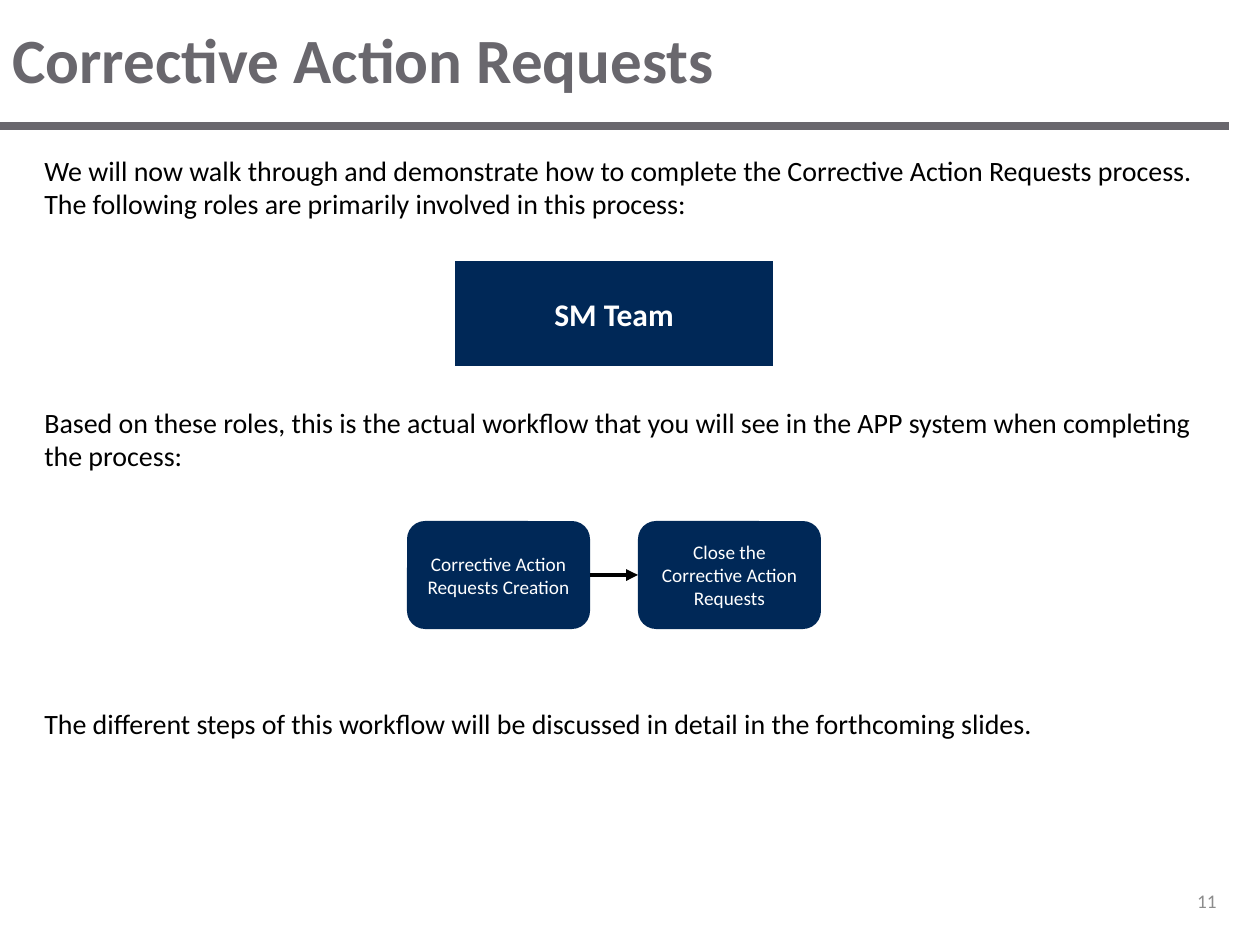
from lxml import etree
from pptx import Presentation
from pptx.dml.color import RGBColor
from pptx.enum.shapes import MSO_CONNECTOR as Connector, MSO_SHAPE as Preset
from pptx.enum.text import MSO_ANCHOR as Anchor, PP_ALIGN as Align
from pptx.oxml.ns import qn
from pptx.util import Pt

PX = 914400 / 126  # EMU per pixel
FONT = "Calibri"
NAVY, GRAY, LIGHT_GRAY = "002857", "69676D", "8C8C8C"
BLACK, WHITE = "000000", "FFFFFF"


def px(*lengths):
    return [round(length * PX) for length in lengths]


def color(hex_string):
    return RGBColor.from_string(hex_string)


def write(shape, *texts, size=16, fill=BLACK, bold=False, align=Align.LEFT,
          anchor=Anchor.TOP, before=0, gap=0):
    """Write one paragraph per text, with gap points between paragraphs."""
    frame = shape.text_frame
    frame.word_wrap = True
    frame.vertical_anchor = anchor
    for index, text in enumerate(texts):
        paragraph = frame.add_paragraph() if index else frame.paragraphs[0]
        paragraph.alignment = align
        paragraph.space_before = Pt(gap if index else before)
        run = paragraph.add_run()
        run.text = text
        run.font.name = FONT
        run.font.size = Pt(size)
        run.font.bold = bold
        run.font.color.rgb = color(fill)


def add_text(slide, box, *texts, **text_format):
    write(slide.shapes.add_textbox(*px(*box)), *texts, **text_format)


def add_box(slide, preset, box, text, outline=None, **text_format):
    shape = slide.shapes.add_shape(preset, *px(*box))
    shape.shadow.inherit = False
    shape.fill.solid()
    shape.fill.fore_color.rgb = color(NAVY)
    if outline:
        shape.line.color.rgb = color(outline)
        shape.line.width = Pt(2)
    else:
        shape.line.fill.background()
    write(shape, text, fill=WHITE, align=Align.CENTER, anchor=Anchor.MIDDLE,
          **text_format)
    return shape


def add_line(slide, ends, stroke, width):
    line = slide.shapes.add_connector(Connector.STRAIGHT, *px(*ends))
    line.line.color.rgb = color(stroke)
    line.line.width = Pt(width)
    etree.SubElement(line._element.spPr, qn("a:effectLst"))
    return line


def add_arrow(slide, source, target):
    """Join the right side of source to the left side of target."""
    arrow = add_line(slide, (0, 0, 0, 0), BLACK, 2.25)
    arrow.begin_connect(source, 3)
    arrow.end_connect(target, 1)
    etree.SubElement(arrow.line._get_or_add_ln(), qn("a:tailEnd"), type="triangle")


def main():
    presentation = Presentation()
    presentation.slide_width, presentation.slide_height = px(1260, 945)
    slide = presentation.slides.add_slide(presentation.slide_layouts[6])

    # Heading and rule
    add_line(slide, (0, 126, 1229, 126), GRAY, 5)
    add_text(slide, (0, 0, 1260, 116), "Corrective Action Requests",
             size=36, fill=GRAY, bold=True, anchor=Anchor.MIDDLE)

    # Body text
    add_text(slide, (32, 147, 1197, 87),
             "We will now walk through and demonstrate how to complete the "
             "Corrective Action Requests process. The following roles are "
             "primarily involved in this process:", before=6)
    add_text(slide, (32, 399, 1197, 352),
             "Based on these roles, this is the actual workflow that you will "
             "see in the APP system when completing the process:",
             "The different steps of this workflow will be discussed in detail "
             "in the forthcoming slides.", gap=134)

    # Role
    add_box(slide, Preset.RECTANGLE, (453, 259, 322, 109), "SM Team",
            outline=WHITE, size=18, bold=True)

    # Workflow steps, joined in order
    steps = ["Corrective Action Requests Creation",
             "Close the Corrective Action Requests"]
    boxes = [add_box(slide, Preset.ROUNDED_RECTANGLE,
                     (407 + 231 * index, 521, 183, 108), step, size=11)
             for index, step in enumerate(steps)]
    for source, target in zip(boxes, boxes[1:]):
        add_arrow(slide, source, target)

    # Slide number
    add_text(slide, (1018, 876, 211, 50), "11", size=11, fill=LIGHT_GRAY,
             align=Align.RIGHT, anchor=Anchor.MIDDLE)

    presentation.save("out.pptx")


if __name__ == "__main__":
    main()
